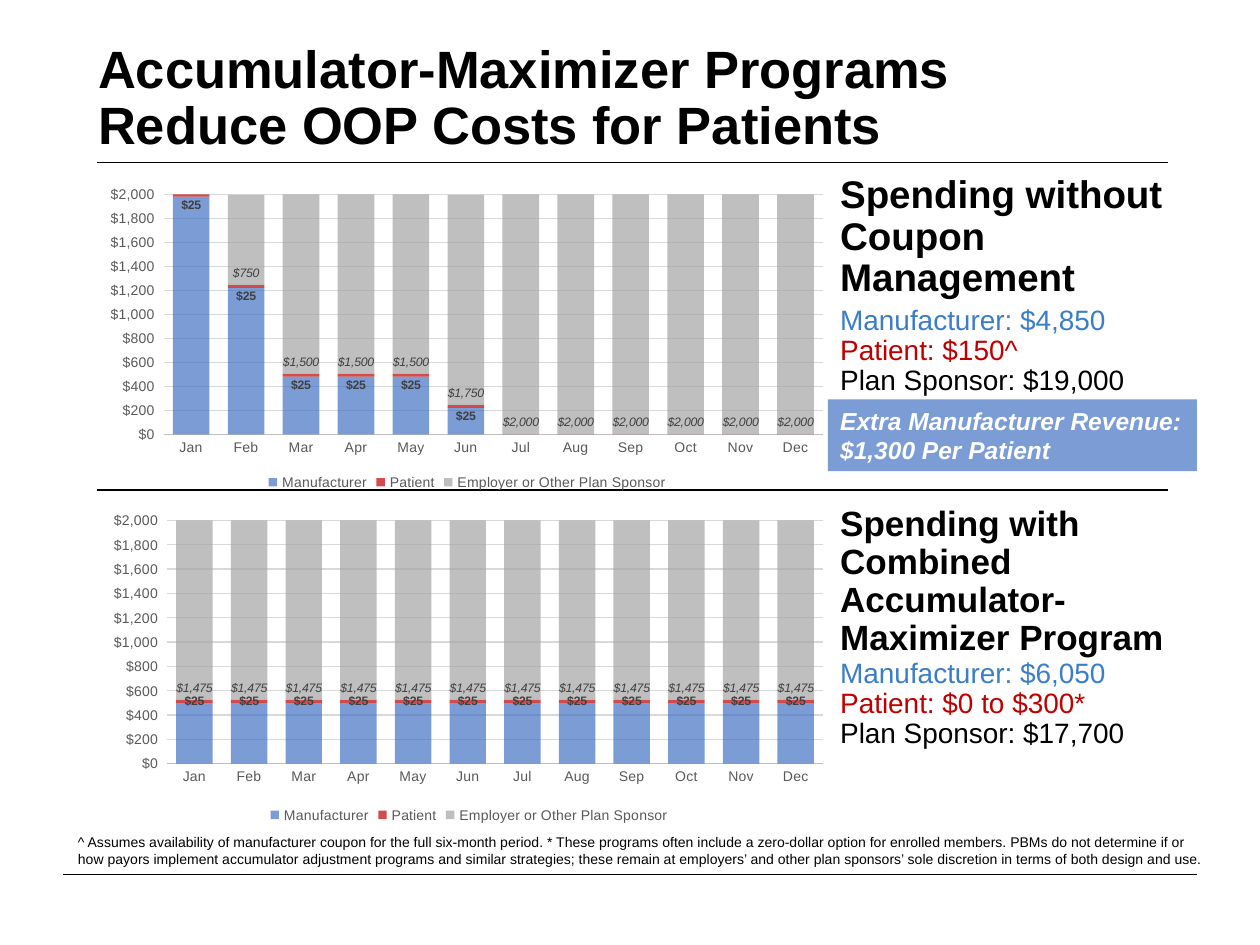
from lxml import etree
from pptx import Presentation
from pptx.chart.data import CategoryChartData
from pptx.dml.color import RGBColor
from pptx.enum.chart import XL_CHART_TYPE as ChartType, XL_LABEL_POSITION as LabelPos
from pptx.enum.chart import XL_LEGEND_POSITION as LegendPos, XL_TICK_MARK as TickMark
from pptx.enum.shapes import MSO_CONNECTOR as Connector, MSO_SHAPE as Shape
from pptx.enum.text import MSO_ANCHOR as Anchor, PP_ALIGN as Align
from pptx.oxml import parse_xml
from pptx.oxml.ns import nsdecls, qn
from pptx.util import Inches, Pt

BLACK = RGBColor(0x00, 0x00, 0x00)
WHITE = RGBColor(0xFF, 0xFF, 0xFF)
BLUE_TEXT = RGBColor(0x3A, 0x7D, 0xC8)
RED = RGBColor(0xC0, 0x00, 0x00)
BLUE = RGBColor(0x44, 0x72, 0xC4)
GRAY = RGBColor(0xA5, 0xA5, 0xA5)
BANNER = RGBColor(0x7C, 0x9C, 0xD6)
LABEL = RGBColor(0x40, 0x40, 0x40)
AXIS_TEXT = RGBColor(0x59, 0x59, 0x59)
AXIS_LINE = RGBColor(0xBF, 0xBF, 0xBF)
GRID = RGBColor(0xD9, 0xD9, 0xD9)

MONTHS = ["Jan", "Feb", "Mar", "Apr", "May", "Jun",
          "Jul", "Aug", "Sep", "Oct", "Nov", "Dec"]
SERIES = {"Manufacturer": BLUE, "Patient": RED, "Employer or Other Plan Sponsor": GRAY}
SIDE_LEFT, SIDE_WIDTH = 6.57, 2.93


def style_font(font, size, color, bold=False, italic=False, name="Arial"):
    font.name, font.size = name, Pt(size)
    font.bold, font.italic = bold, italic
    font.color.rgb = color


def write(frame, lines, size, colors=(BLACK,), bold=False, italic=False,
          anchor=Anchor.BOTTOM, spacing=0.9):
    frame.word_wrap = True
    frame.vertical_anchor = anchor
    for index, line in enumerate(lines):
        para = frame.add_paragraph() if index else frame.paragraphs[0]
        para.alignment = Align.LEFT
        para.line_spacing = spacing
        span = para.add_run()
        span.text = line
        style_font(span.font, size, colors[index], bold, italic)


class SpendingSlide:
    """Draws the text, rules and stacked charts of one slide."""

    def __init__(self, page):
        self.page = page

    def text(self, left, top, width, height, lines, size, **style):
        box = self.page.shapes.add_textbox(
            Inches(left), Inches(top), Inches(width), Inches(height))
        write(box.text_frame, lines, size, **style)

    def rule(self, left, right, y, weight):
        line = self.page.shapes.add_connector(
            Connector.STRAIGHT, Inches(left), Inches(y), Inches(right), Inches(y))
        line.line.color.rgb = BLACK
        line.line.width = Pt(weight)
        etree.SubElement(line._element.spPr, qn("a:effectLst"))

    def banner(self, left, top, width, height, line):
        box = self.page.shapes.add_shape(
            Shape.RECTANGLE, Inches(left), Inches(top), Inches(width), Inches(height))
        box.shadow.inherit = False
        box.fill.solid()
        box.fill.fore_color.rgb = BANNER
        box.line.fill.background()
        write(box.text_frame, [line], 14, colors=(WHITE,), bold=True, italic=True,
              anchor=Anchor.MIDDLE, spacing=1.0)

    def chart(self, left, top, width, height, values, patient_position, plot_top, plot_height):
        data = CategoryChartData()
        data.categories = MONTHS
        for name, amounts in zip(SERIES, values):
            data.add_series(name, amounts)
        chart = self.page.shapes.add_chart(
            ChartType.COLUMN_STACKED, Inches(left), Inches(top),
            Inches(width), Inches(height), data).chart
        style_font(chart.font, 10, BLACK, name="Calibri")
        chart.has_title = False
        chart.has_legend = True
        chart.legend.position = LegendPos.BOTTOM
        chart.legend.include_in_layout = False
        style_font(chart.legend.font, 8, AXIS_TEXT)
        self.axes(chart)
        plot = chart.plots[0]
        plot.gap_width, plot.overlap = 50, 100
        plot.vary_by_categories = False
        for series, color in zip(plot.series, SERIES.values()):
            series.format.fill.solid()
            series.format.fill.fore_color.rgb = color
            shade = next(series._element.iter(qn("a:srgbClr")))
            etree.SubElement(shade, qn("a:alpha"), val="70000")
        self.labels(plot.series[1], patient_position, '"$"#,##0;;', bold=True)
        self.labels(plot.series[2], LabelPos.INSIDE_BASE, '"$"#,##0', italic=True)
        self.place_plot(chart, 0.09, plot_top, 0.89, plot_height)

    def axes(self, chart):
        months, dollars = chart.category_axis, chart.value_axis
        for axis in (months, dollars):
            axis.major_tick_mark = axis.minor_tick_mark = TickMark.NONE
            style_font(axis.tick_labels.font, 8, AXIS_TEXT)
        months.format.line.color.rgb = AXIS_LINE
        months.format.line.width = Pt(0.75)
        dollars.format.line.fill.background()
        dollars.minimum_scale, dollars.maximum_scale, dollars.major_unit = 0, 2000, 200
        dollars.tick_labels.number_format = '"$"#,##0_);\\("$"#,##0\\)'
        dollars.tick_labels.number_format_is_linked = False
        dollars.major_gridlines.format.line.color.rgb = GRID
        dollars.major_gridlines.format.line.width = Pt(0.75)

    def labels(self, series, position, number_format, **style):
        labels = series.data_labels
        labels.show_value = True
        labels.number_format = number_format
        labels.number_format_is_linked = False
        labels.position = position
        style_font(labels.font, 7, LABEL, **style)

    def place_plot(self, chart, x, y, w, h):
        area = chart._chartSpace.chart.plotArea
        for old in area.findall(qn("c:layout")):
            area.remove(old)
        parts = "".join(f'<c:{tag} val="{value}"/>' for tag, value in
                        (("layoutTarget", "inner"), ("xMode", "edge"), ("yMode", "edge"),
                         ("x", x), ("y", y), ("w", w), ("h", h)))
        area.insert(0, parse_xml(f'<c:layout {nsdecls("c")}><c:manualLayout>{parts}'
                                 '</c:manualLayout></c:layout>'))


def main():
    deck = Presentation()
    deck.slide_width, deck.slide_height = Inches(10), Inches(7.5)
    slide = SpendingSlide(deck.slides.add_slide(deck.slide_layouts[6]))

    slide.rule(0.5, 9.5, 6.94, 1)
    for y in (1.29, 3.89):
        slide.rule(0.77, 9.27, y, 0.75)

    slide.text(0.68, 0.34, 8.5, 0.95,
               ["Accumulator-Maximizer Programs Reduce OOP Costs for Patients"], 30, bold=True)
    slide.text(SIDE_LEFT, 1.35, SIDE_WIDTH, 1.08,
               ["Spending without Coupon Management"], 22, bold=True)
    slide.text(SIDE_LEFT, 3.96, SIDE_WIDTH, 1.31,
               ["Spending with Combined Accumulator-Maximizer Program"], 20, bold=True)
    for top, manufacturer, patient, sponsor in (
            (2.34, "$4,850", "$150^", "$19,000"),
            (5.14, "$6,050", "$0 to $300*", "$17,700")):
        slide.text(SIDE_LEFT, top, SIDE_WIDTH, 0.86,
                   [f"Manufacturer: {manufacturer}", f"Patient: {patient}",
                    f"Plan Sponsor: {sponsor}"], 16, colors=(BLUE_TEXT, RED, BLACK))
    slide.text(0.52, 6.57, 9.18, 0.36, [
        "^ Assumes availability of manufacturer coupon for the full six-month period. "
        "* These programs often include a zero-dollar option for enrolled members. "
        "PBMs do not determine if or how payors implement accumulator adjustment programs "
        "and similar strategies; these remain at employers’ and other plan sponsors’ sole "
        "discretion in terms of both design and use."], 8, anchor=Anchor.TOP, spacing=1.0)

    without_management = (
        [1980, 1220] + [480] * 3 + [220] + [0] * 6,
        [25] * 6 + [0] * 6,
        [0, 750] + [1500] * 3 + [1750] + [2000] * 6)
    with_program = ([500] * 12, [25] * 12, [1475] * 12)
    slide.chart(0.77, 1.39, 5.88, 2.54, without_management, LabelPos.INSIDE_END, 0.06, 0.75)
    slide.chart(0.8, 4.03, 5.85, 2.54, with_program, LabelPos.CENTER, 0.04, 0.76)
    slide.banner(SIDE_LEFT, 3.17, SIDE_WIDTH, 0.57,
                 "Extra Manufacturer Revenue: $1,300 Per Patient")
    deck.save("out.pptx")


if __name__ == "__main__":
    main()
